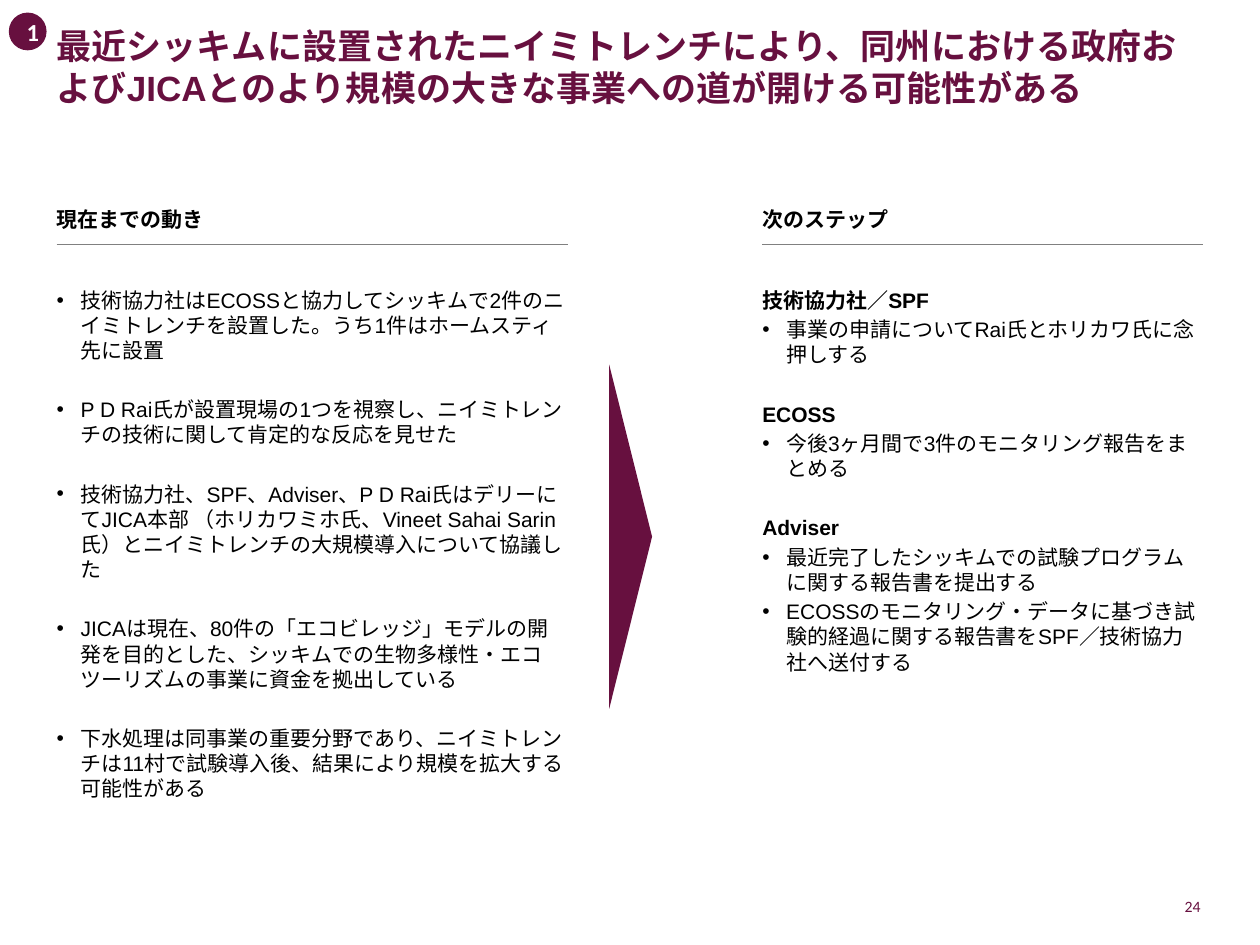
from lxml import etree
from pptx import Presentation
from pptx.dml.color import RGBColor
from pptx.enum.shapes import MSO_CONNECTOR, MSO_SHAPE
from pptx.enum.text import MSO_ANCHOR, MSO_AUTO_SIZE, PP_ALIGN
from pptx.oxml.ns import qn
from pptx.util import Inches, Pt

LINE, TRIANGLE, OVAL = MSO_CONNECTOR.STRAIGHT, MSO_SHAPE.ISOSCELES_TRIANGLE, MSO_SHAPE.OVAL
TOP, MIDDLE, BOTTOM = MSO_ANCHOR.TOP, MSO_ANCHOR.MIDDLE, MSO_ANCHOR.BOTTOM
LEFT, CENTER, RIGHT = PP_ALIGN.LEFT, PP_ALIGN.CENTER, PP_ALIGN.RIGHT
NO_FIT = MSO_AUTO_SIZE.NONE

COLORS = {"plum": "67103F", "black": "000000", "white": "FFFFFF", "gray": "808080"}
TITLE = "最近シッキムに設置されたニイミトレンチにより、同州における政府およびJICAとのより規模の大きな事業への道が開ける可能性がある"
COLUMNS = [
    {"heading": "現在までの動き", "left": 0.45, "width": 4.06, "groups": [
        (None, ["技術協力社はECOSSと協力してシッキムで2件のニイミトレンチを設置した。うち1件はホームスティ先に設置"]),
        (None, ["P D Rai氏が設置現場の1つを視察し、ニイミトレンチの技術に関して肯定的な反応を見せた"]),
        (None, ["技術協力社、SPF、Adviser、P D Rai氏はデリーにてJICA本部 （ホリカワミホ氏、Vineet Sahai Sarin氏）とニイミトレンチの大規模導入について協議した"]),
        (None, ["JICAは現在、80件の「エコビレッジ」モデルの開発を目的とした、シッキムでの生物多様性・エコツーリズムの事業に資金を拠出している"]),
        (None, ["下水処理は同事業の重要分野であり、ニイミトレンチは11村で試験導入後、結果により規模を拡大する可能性がある"]),
    ]},
    {"heading": "次のステップ", "left": 6.05, "width": 3.5, "groups": [
        ("技術協力社／SPF", ["事業の申請についてRai氏とホリカワ氏に念押しする"]),
        ("ECOSS", ["今後3ヶ月間で3件のモニタリング報告をまとめる"]),
        ("Adviser", ["最近完了したシッキムでの試験プログラムに関する報告書を提出する",
                     "ECOSSのモニタリング・データに基づき試験的経過に関する報告書をSPF／技術協力社へ送付する"]),
    ]},
]
HEADING_TOP, RULE_TOP, BODY_TOP = 1.59, 1.94, 2.28
ITEM_GAP, GROUP_GAP = 2.4, 19.4
INDENT = 0.19


def color(name):
    return RGBColor.from_string(COLORS[name])


def prepare(frame, anchor):
    frame.margin_left = frame.margin_right = frame.margin_top = frame.margin_bottom = 0
    frame.word_wrap = True
    frame.auto_size = NO_FIT
    frame.vertical_anchor = anchor


def write(para, text, size, tint="black", font="Arial", bold=False, align=LEFT):
    para.text = text
    para.alignment = align
    para.font.size = Pt(size)
    para.font.name = font
    para.font.bold = bold
    para.font.color.rgb = color(tint)


def add_box(page, left, top, width, height, anchor):
    box = page.shapes.add_textbox(Inches(left), Inches(top), Inches(width), Inches(height))
    prepare(box.text_frame, anchor)
    return box.text_frame


def add_bullet(para):
    properties = para._p.get_or_add_pPr()
    properties.set("marL", str(Inches(INDENT)))
    properties.set("indent", str(-Inches(INDENT)))
    etree.SubElement(properties, qn("a:buFont")).set("typeface", "Arial")
    etree.SubElement(properties, qn("a:buChar")).set("char", "•")


def add_rule(page, left, width):
    rule = page.shapes.add_connector(
        LINE, Inches(left), Inches(RULE_TOP), Inches(left + width), Inches(RULE_TOP))
    rule.line.color.rgb = color("gray")
    rule.line.width = Pt(0.25)
    etree.SubElement(rule._element.spPr, qn("a:effectLst"))


def add_groups(frame, groups):
    first = True
    for heading, items in groups:
        entries = ([(heading, False)] if heading else []) + [(item, True) for item in items]
        for position, (text, bulleted) in enumerate(entries):
            para = frame.paragraphs[0] if first else frame.add_paragraph()
            if not first:
                para.space_before = Pt(ITEM_GAP if position else GROUP_GAP)
            if bulleted:
                add_bullet(para)
            write(para, text, 12, bold=not bulleted)
            first = False


def add_solid(page, kind, left, top, width, height):
    shape = page.shapes.add_shape(kind, Inches(left), Inches(top), Inches(width), Inches(height))
    shape.shadow.inherit = False
    shape.fill.solid()
    shape.fill.fore_color.rgb = color("plum")
    shape.line.fill.background()
    return shape


def main():
    """Build the slide on progress so far and next steps."""
    deck = Presentation()
    deck.slide_width, deck.slide_height = Inches(10), Inches(7.5)
    page = deck.slides.add_slide(deck.slide_layouts[5])

    title = page.shapes.title
    title.left, title.top = Inches(0.45), Inches(-0.25)
    title.width, title.height = Inches(9.09), Inches(1.11)
    prepare(title.text_frame, BOTTOM)
    write(title.text_frame.paragraphs[0], TITLE, 20, "plum", bold=True)

    for column in COLUMNS:
        left, width = column["left"], column["width"]
        heading = add_box(page, left, HEADING_TOP, width, 0.3, MIDDLE)
        write(heading.paragraphs[0], column["heading"], 12, font="Noto Sans CJK JP", bold=True)
        add_rule(page, left, width)
        add_groups(add_box(page, left, BODY_TOP, width, 4.65, TOP), column["groups"])

    pointer = add_solid(page, TRIANGLE, 3.64, 4.09, 2.73, 0.34)
    pointer.rotation = 90
    badge = add_solid(page, OVAL, 0.07, 0.1, 0.3, 0.3)
    write(badge.text_frame.paragraphs[0], "1", 14, "white", "Calibri", True, CENTER)
    number = add_box(page, 8.8, 7.03, 0.73, 0.32, MIDDLE)
    write(number.paragraphs[0], "24", 9, "plum", "Calibri", align=RIGHT)

    deck.save("out.pptx")


if __name__ == "__main__":
    main()
